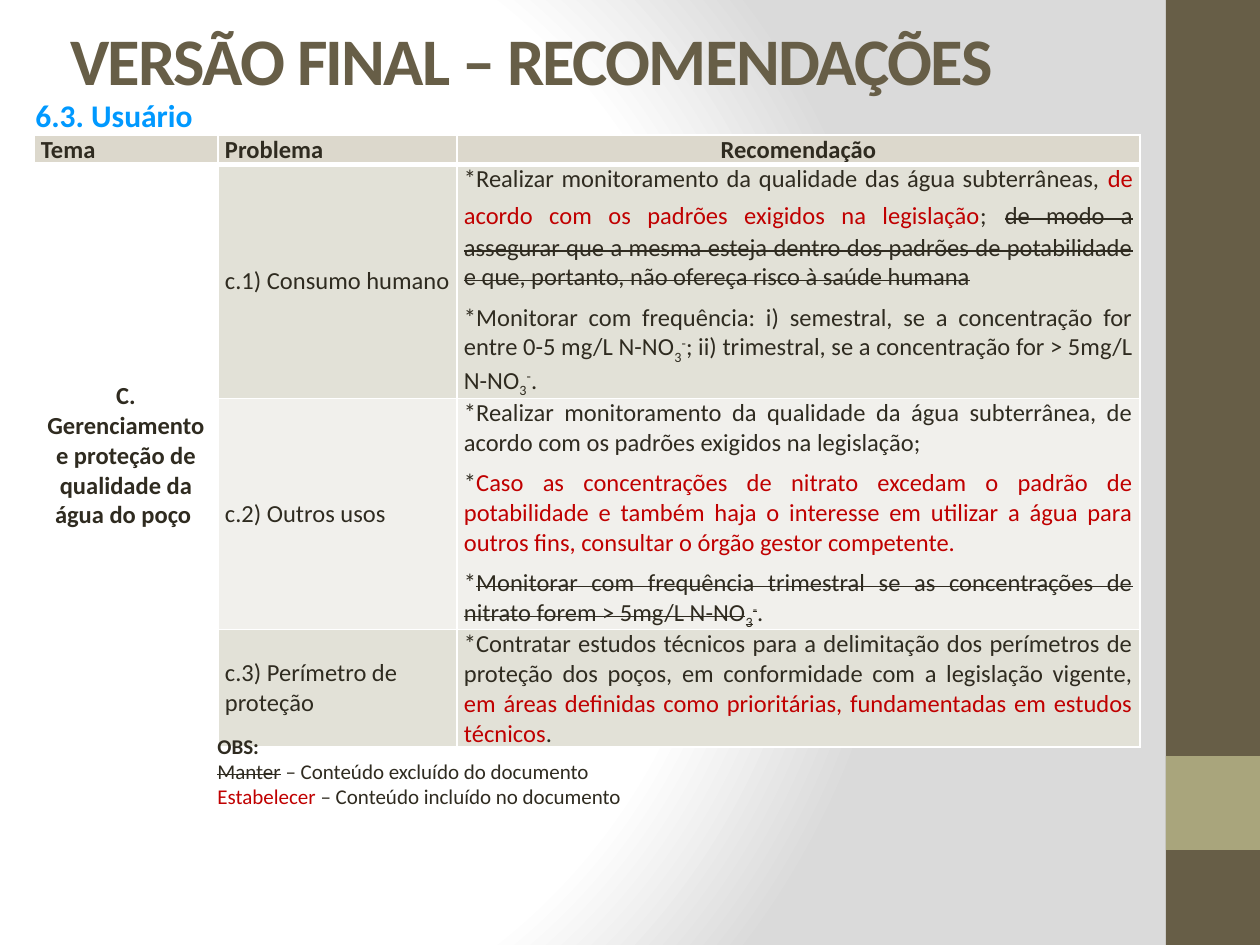
import lxml.etree
import pptx
import pptx.dml.color
import pptx.enum.shapes
import pptx.enum.text
import pptx.oxml
import pptx.util

PX = 914400 / 126
FONT = "Calibri"
NS = "http://schemas.openxmlformats.org/drawingml/2006/main"
COLORS = {
    "white": "FFFFFF", "grey": "DADADA", "brown": "675E47", "olive": "A9A57C",
    "text": "2F2B20", "red": "C00000", "blue": "0099FF",
    "header": "DCD8CC", "dark": "E2E1D7", "light": "F1F0EC",
}
SUB, SUP, STRIKE = {"baseline": "-25000"}, {"baseline": "30000"}, {"strike": "sngStrike"}
STYLES = {
    "plain": {},
    "bold": {"bold": True},
    "new": {"color": "red"},
    "wide": {"size": 18},
    "cut": {"marks": STRIKE},
    "sub": {"marks": SUB},
    "sup": {"marks": SUP},
    "cut sub": {"marks": {**STRIKE, **SUB}},
    "cut sup": {"marks": {**STRIKE, **SUP}},
    "title": {"size": 38, "bold": True, "color": "brown", "marks": {"spc": "-100"}},
    "heading": {"size": 18, "bold": True, "color": "blue"},
}
ALIGN = pptx.enum.text.PP_ALIGN
MIDDLE = pptx.enum.text.MSO_ANCHOR.MIDDLE
HEADERS = [("Tema", ALIGN.LEFT), ("Problema", ALIGN.LEFT), ("Recomendação", ALIGN.CENTER)]
THEME = [[("C.", "bold")], [("Gerenciamento e proteção de qualidade da água do poço ", "bold")]]
ROWS = [
    ("c.1) Consumo humano", "dark", [
        [("*Realizar monitoramento da qualidade das água subterrâneas, ", "plain"),
         ("de acordo com os padrões exigidos na legislação", "new"),
         (";", "plain"), (" ", "wide"),
         ("de modo a assegurar que a mesma esteja dentro dos padrões de potabilidade "
          "e que, portanto, não ofereça risco à saúde humana", "cut")],
        [("*Monitorar com frequência: i) semestral, se a concentração for "
          "entre 0-5 mg/L N-NO", "plain"), ("3", "sub"), ("-", "sup"),
         ("; ii) trimestral, se a concentração for > 5mg/L N-NO", "plain"),
         ("3", "sub"), ("-", "sup"), (".", "plain")],
    ]),
    ("c.2) Outros usos", "light", [
        [("*Realizar monitoramento da qualidade da água subterrânea, de acordo com "
          "os padrões exigidos na legislação;", "plain")],
        [("*", "plain"),
         ("Caso as concentrações de nitrato excedam o padrão de potabilidade e também "
          "haja o interesse em utilizar a água para outros fins, consultar o órgão "
          "gestor competente.", "new")],
        [("*", "plain"),
         ("Monitorar com frequência trimestral se as concentrações de nitrato forem "
          "> 5mg/L N-NO", "cut"), ("3", "cut sub"), ("-", "cut sup"), (".", "plain")],
    ]),
    ("c.3) Perímetro de proteção", "dark", [
        [("*Contratar estudos técnicos para a delimitação dos perímetros de proteção dos "
          "poços, em conformidade com a legislação vigente, ", "plain"),
         ("em áreas definidas como prioritárias, fundamentadas em estudos técnicos", "new"),
         (". ", "plain")],
    ]),
]
NOTES = [
    [("OBS:", "bold")],
    [("Manter", "cut"), (" – Conteúdo excluído do documento", "plain")],
    [("Estabelecer", "new"), (" – Conteúdo incluído no documento", "plain")],
]


def px(*lengths):
    """Turn pixel lengths into EMU."""
    return [round(length * PX) for length in lengths]


def rgb(name):
    """Look up a named colour."""
    return pptx.dml.color.RGBColor.from_string(COLORS[name])


def set_values(target, values):
    """Set attributes from a dict of values."""
    for name, value in values.items():
        setattr(target, name, value)


def write(frame, paragraphs, size=14, align=ALIGN.LEFT, after=0):
    """Fill a text frame with paragraphs of styled spans."""
    for index, spans in enumerate(paragraphs):
        para = frame.add_paragraph() if index else frame.paragraphs[0]
        set_values(para, {"alignment": align, "space_after": pptx.util.Pt(after)})
        for text, style_name in spans:
            style = STYLES[style_name]
            span = para.add_run()
            span.text = text
            set_values(span.font, {"name": FONT, "bold": style.get("bold", False),
                                   "size": pptx.util.Pt(style.get("size", size))})
            span.font.color.rgb = rgb(style.get("color", "text"))
            for name, value in style.get("marks", {}).items():
                span._r.get_or_add_rPr().set(name, value)


def add_background(slide):
    """Give the slide a circular white to grey gradient."""
    stops = "".join(
        f'<a:gs pos="{place * 1000}"><a:srgbClr val="{COLORS[name]}"/></a:gs>'
        for place, name in [(0, "white"), (75, "white"), (100, "grey")])
    fill = pptx.oxml.parse_xml(
        f'<a:gradFill xmlns:a="{NS}" rotWithShape="1"><a:gsLst>{stops}</a:gsLst>'
        '<a:path path="circle"><a:fillToRect l="20000" t="50000" r="100000" b="50000"/>'
        '</a:path></a:gradFill>')
    slide.background.fill.solid()
    properties = slide._element.cSld.bg.bgPr
    properties.replace(properties[0], fill)


def add_bar(slide, color, *place):
    """Draw a plain rectangle of the side strip."""
    bar = slide.shapes.add_shape(pptx.enum.shapes.MSO_SHAPE.RECTANGLE, *px(*place))
    bar.shadow.inherit = False
    bar.fill.solid()
    bar.fill.fore_color.rgb = rgb(color)
    bar.line.fill.background()


def add_text(slide, paragraphs, place, size=14, **values):
    """Add a wrapped text box."""
    frame = slide.shapes.add_textbox(*px(*place)).text_frame
    set_values(frame, {"word_wrap": True, **values})
    write(frame, paragraphs, size)


def format_cell(cell, fill=None, bottom=1, anchor=MIDDLE):
    """Set margins, white borders and fill of a table cell."""
    side, none = px(7, 0)
    set_values(cell, {"margin_left": side, "margin_right": side, "margin_top": none,
                      "margin_bottom": none, "vertical_anchor": anchor})
    properties = cell._tc.get_or_add_tcPr()
    for edge, width in {"L": 1, "R": 1, "T": 1, "B": bottom}.items():
        line = lxml.etree.SubElement(properties, f"{{{NS}}}ln{edge}", w=str(width * 12700))
        paint = lxml.etree.SubElement(line, f"{{{NS}}}solidFill")
        lxml.etree.SubElement(paint, f"{{{NS}}}srgbClr", val=COLORS["white"])
    if fill:
        cell.fill.solid()
        cell.fill.fore_color.rgb = rgb(fill)
    else:
        cell.fill.background()


def add_recommendations(slide):
    """Add the table of themes, problems and recommendations."""
    widths, heights = [184, 239, 683], [28, 234, 231, 117]
    table = slide.shapes.add_table(
        len(heights), len(widths), *px(34, 135, sum(widths), sum(heights))).table
    set_values(table, {"first_row": False, "horz_banding": False})
    for column, width in zip(table.columns, px(*widths)):
        column.width = width
    for row, height in zip(table.rows, px(*heights)):
        row.height = height
    for index, (label, align) in enumerate(HEADERS):
        cell = table.cell(0, index)
        format_cell(cell, "header", bottom=3, anchor=pptx.enum.text.MSO_ANCHOR.TOP)
        write(cell.text_frame, [[(label, "bold")]], align=align)
    for index, (problem, fill, advice) in enumerate(ROWS, 1):
        theme, name, text = [table.cell(index, column) for column in range(3)]
        format_cell(theme)
        format_cell(name, fill)
        format_cell(text, fill)
        write(name.text_frame, [[(problem, "plain")]], after=6)
        write(text.text_frame, advice, align=ALIGN.JUSTIFY, after=6 if len(advice) > 1 else 0)
    table.cell(1, 0).merge(table.cell(len(ROWS), 0))
    write(table.cell(1, 0).text_frame, THEME, align=ALIGN.CENTER)


def main():
    """Build the slide and save it."""
    deck = pptx.Presentation()
    deck.slide_width, deck.slide_height = px(1260, 945)
    page = deck.slides.add_slide(deck.slide_layouts[6])
    add_background(page)
    add_bar(page, "brown", 1166, 0, 94, 945)
    add_bar(page, "olive", 1166, 756, 94, 94)
    add_text(page, [[("VERSÃO FINAL – RECOMENDAÇÕES", "title")]], (58, 0, 1226, 117),
             vertical_anchor=MIDDLE)
    top, bottom = px(4, 10)
    add_text(page, [[("6.3. Usuário", "heading")]], (23, 91, 627, 53),
             vertical_anchor=MIDDLE, margin_top=top, margin_bottom=bottom)
    add_recommendations(page)
    add_text(page, NOTES, (205, 727, 753, 89), size=12)
    deck.save("out.pptx")


if __name__ == "__main__":
    main()
